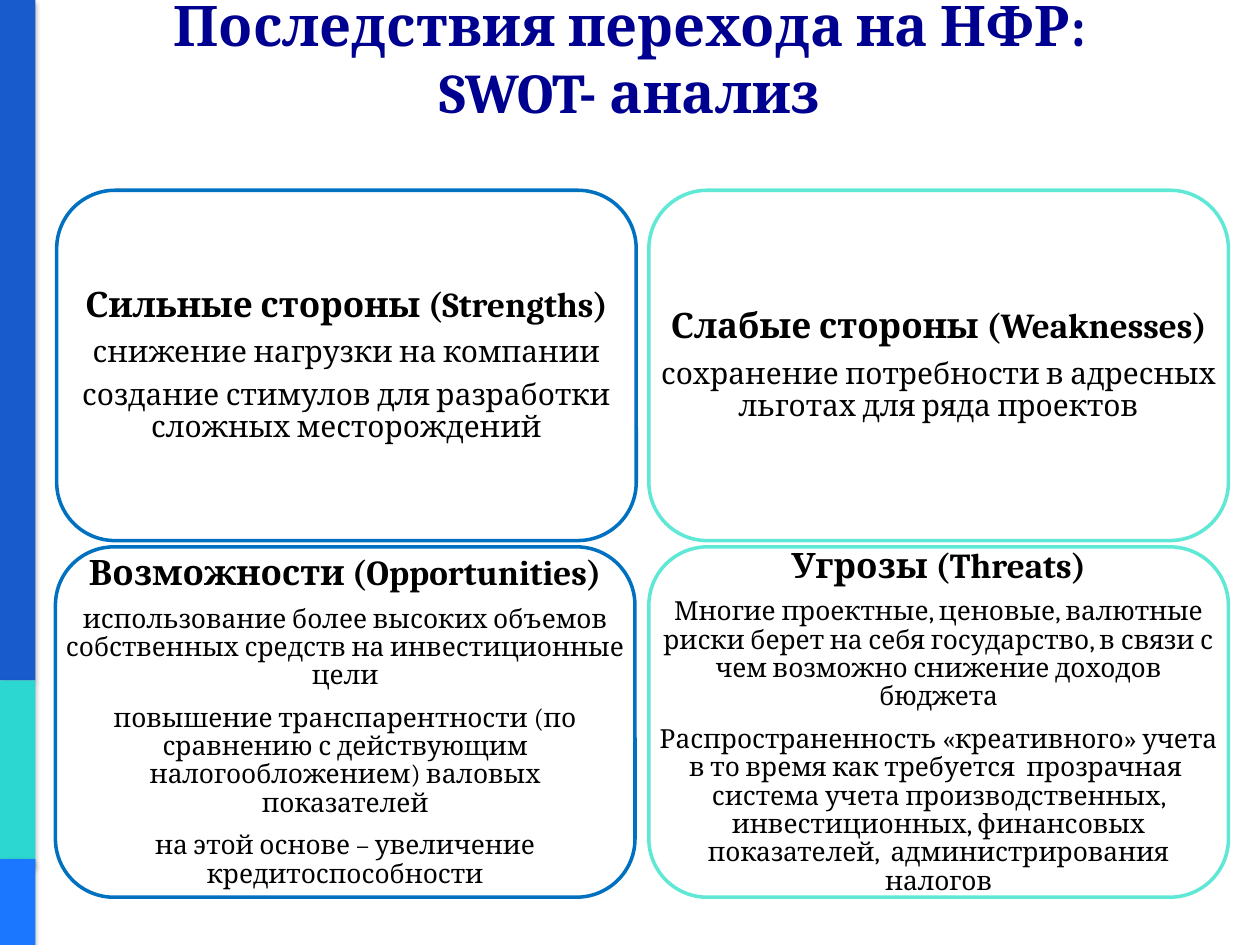
from lxml import etree
from pptx import Presentation
from pptx.dml.color import RGBColor
from pptx.enum.shapes import MSO_SHAPE
from pptx.enum.text import MSO_ANCHOR, PP_ALIGN
from pptx.oxml.ns import qn
from pptx.util import Pt

RECT, ROUND = MSO_SHAPE.RECTANGLE, MSO_SHAPE.ROUNDED_RECTANGLE
MIDDLE, CENTER = MSO_ANCHOR.MIDDLE, PP_ALIGN.CENTER

CARD_W, CARD_H = 331.2, 200.2
LEFT, RIGHT = 32.4, 370.8
TOP, BOTTOM = 108.7, 312.5
BLUE, MINT = "0070C0", "5FE8D6"

BARS = [(0, 388.8, "185BCD"), (388.8, 106.6, "2CD6D1"), (491, 54, "1B77FF")]

CARDS = [
    (LEFT, TOP, BLUE, 17, 6, "Сильные стороны (Strengths)", [
        "снижение нагрузки на компании",
        "создание стимулов для разработки сложных месторождений"]),
    (RIGHT, TOP, MINT, 17, 6, "Слабые стороны (Weaknesses)", [
        "сохранение потребности в адресных льготах для ряда проектов"]),
    (LEFT - 0.7, BOTTOM, BLUE, 15, 8, "Возможности (Opportunities)", [
        "использование более высоких объемов собственных средств на инвестиционные цели",
        "повышение транспарентности (по сравнению с действующим налогообложением) валовых показателей",
        "на этой основе – увеличение кредитоспособности"]),
    (RIGHT, BOTTOM, MINT, 15, 8, "Угрозы (Threats)", [
        "Многие проектные, ценовые, валютные риски берет на себя государство, "
        "в связи с чем возможно снижение доходов бюджета",
        "Распространенность «креативного» учета в то время как требуется  прозрачная  "
        "система учета производственных, инвестиционных, финансовых показателей,  "
        "администрирования налогов"]),
]


def rgb(value):
    return RGBColor.from_string(value)


class Deck:
    font = "Cambria"
    ink = "000000"
    title_ink = "000090"
    paper = "FFFFFF"

    def __init__(self, width, height):
        self.prs = Presentation()
        self.prs.slide_width, self.prs.slide_height = Pt(width), Pt(height)
        self.s = self.prs.slides.add_slide(self.prs.slide_layouts[6])

    def shape(self, kind, x, y, w, h, fill):
        sp = self.s.shapes.add_shape(kind, Pt(x), Pt(y), Pt(w), Pt(h))
        sp.shadow.inherit = False
        sp.fill.solid()
        sp.fill.fore_color.rgb = rgb(fill)
        return sp

    def bar(self, y, h, fill):
        sp = self.shape(RECT, 0, y, 20.2, h, fill)
        sp.line.fill.background()
        effects = sp._element.spPr.find(qn("a:effectLst"))
        shadow = etree.SubElement(
            effects, qn("a:outerShdw"), blurRad=str(Pt(3.1)), dist=str(Pt(1.8)),
            dir="5400000", rotWithShape="0")
        color = etree.SubElement(shadow, qn("a:srgbClr"), val="000000")
        etree.SubElement(color, qn("a:alpha"), val="35000")

    def text(self, x, y, w, h, inset):
        tf = self.s.shapes.add_textbox(Pt(x), Pt(y), Pt(w), Pt(h)).text_frame
        tf.word_wrap = True
        tf.vertical_anchor = MIDDLE
        tf.margin_left = tf.margin_right = Pt(inset)
        tf.margin_top = tf.margin_bottom = Pt(inset)
        return tf

    def run(self, p, text, size, color, bold=False):
        r = p.add_run()
        r.text = text
        r.font.name, r.font.size, r.font.bold = self.font, Pt(size), bold
        r.font.color.rgb = rgb(color)

    def title(self, lines):
        p = self.text(36, 0, 648, 66.2, 3.6).paragraphs[0]
        p.alignment = CENTER
        for i, line in enumerate(lines):
            if i:
                p.add_line_break()
            self.run(p, line, 32, self.title_ink, True)

    def card(self, x, y, color, size, gap, heading, items):
        sp = self.shape(ROUND, x, y, CARD_W, CARD_H, self.paper)
        sp.line.color.rgb = rgb(color)
        sp.line.width = Pt(2)
        tf = self.text(x, y, CARD_W, CARD_H, 5.8)
        for i, item in enumerate([heading, *items]):
            p = tf.add_paragraph() if i else tf.paragraphs[0]
            p.alignment = CENTER
            p.line_spacing = 0.9
            p.space_after = Pt(gap if i else 7)
            self.run(p, item, size if i else 20, self.ink, not i)


def main():
    deck = Deck(720, 540)
    for bar in BARS:
        deck.bar(*bar)
    deck.title(["Последствия перехода на НФР:", "SWOT- анализ"])
    for card in CARDS:
        deck.card(*card)
    deck.prs.save("out.pptx")


if __name__ == "__main__":
    main()
